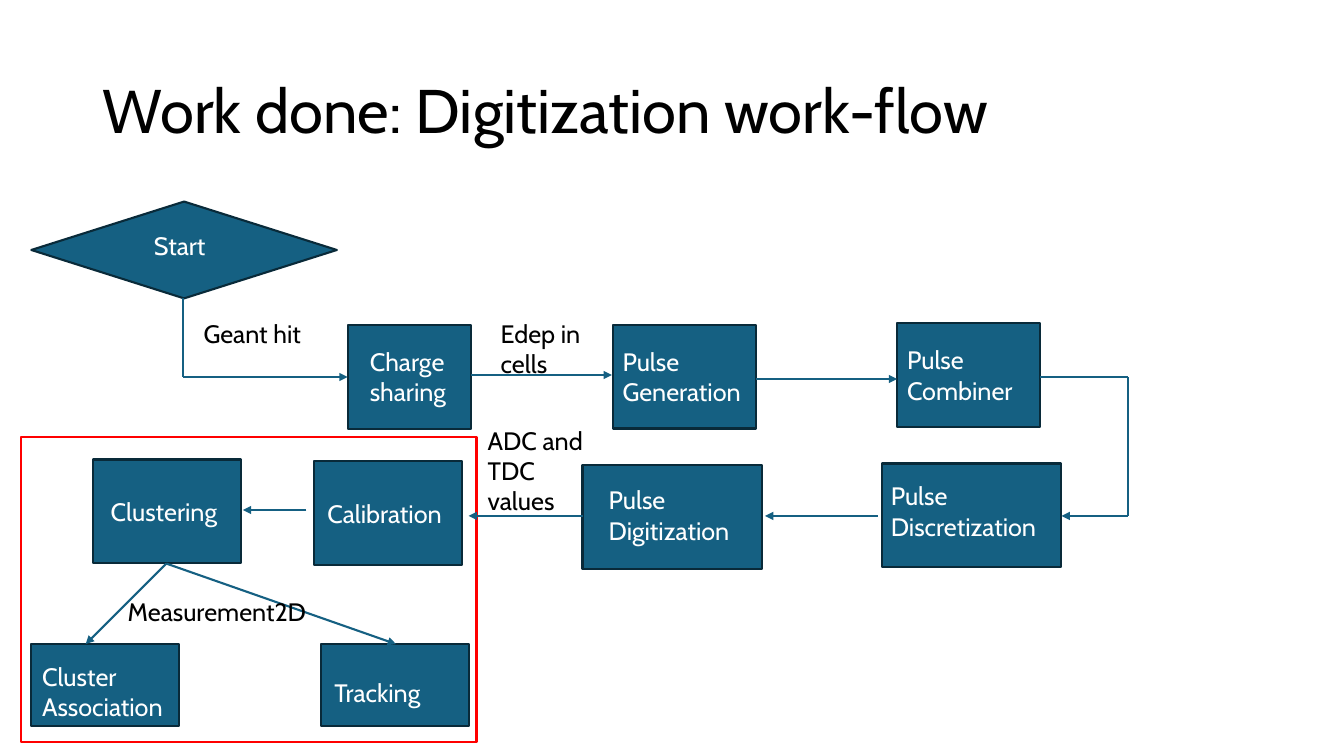
"""Builds the slide that shows the digitization work-flow as a flow chart."""
from itertools import pairwise

from lxml import etree
from pptx import Presentation
from pptx.dml.color import RGBColor
from pptx.enum.shapes import MSO_CONNECTOR, MSO_SHAPE
from pptx.enum.text import MSO_ANCHOR
from pptx.oxml.ns import qn
from pptx.util import Cm, Pt

DIAMOND = MSO_SHAPE.DIAMOND
RECTANGLE = MSO_SHAPE.RECTANGLE
STRAIGHT = MSO_CONNECTOR.STRAIGHT
MIDDLE = MSO_ANCHOR.MIDDLE

FONT = "Cabin"
COLOURS = {
    "text": "000000",
    "step": "156082",
    "outline": "092A39",
    "step text": "FFFFFF",
    "frame": "FF0000",
}
LINE_WIDTH = Pt(1.5)
ROW_HEIGHT = 2.62
LAST_ROW_HEIGHT = 2.06
STEP_TEXT_WIDTH = 4.32
TEXT_LINE = 0.76
TEXT_MARGINS = 0.26

# text, left, top, width, height, text left, text top, text lines
STEPS = [
    ("Charge sharing", 8.76, 8.2, 3.12, ROW_HEIGHT, 9.07, 8.59, 2),
    ("Pulse Generation", 15.44, 8.18, 3.61, ROW_HEIGHT, 15.44, 8.59, 2),
    ("Pulse Combiner", 22.61, 8.15, 3.61, ROW_HEIGHT, 22.61, 8.56, 2),
    ("Pulse Discretization", 22.23, 11.68, 4.52, ROW_HEIGHT, 22.2, 11.99, 2),
    ("Pulse Digitization", 14.68, 11.71, 4.52, ROW_HEIGHT, 15.09, 12.09, 2),
    ("Calibration", 7.92, 11.61, 3.73, ROW_HEIGHT, 8.0, 12.42, 1),
    ("Clustering", 2.34, 11.58, 3.73, ROW_HEIGHT, 2.54, 12.37, 1),
    ("Cluster\nAssociation", 0.79, 16.23, 3.73, LAST_ROW_HEIGHT, 0.81, 16.54, 2),
    ("Tracking", 8.1, 16.23, 3.73, LAST_ROW_HEIGHT, 8.18, 16.94, 1),
]
ROUTES = [
    [(4.62, 7.52), (4.62, 9.5), (8.76, 9.5)],
    [(11.86, 9.45), (15.42, 9.45)],
    [(19.05, 9.55), (22.61, 9.55)],
    [(26.21, 9.5), (28.42, 9.5), (28.42, 13), (26.75, 13)],
    [(22.12, 13), (19.28, 13)],
    [(14.68, 13), (11.81, 13)],
    [(7.72, 12.85), (6.12, 12.85)],
    [(4.19, 14.2), (2.16, 16.23)],
    [(4.19, 14.2), (9.98, 16.23)],
]
# text, left, top, width, text lines
LABELS = [
    ("Geant hit", 4.88, 7.9, 5.49, 1),
    ("Edep in cells", 12.37, 7.9, 3.12, 2),
    ("ADC and TDC values", 12.04, 10.59, 3.12, 3),
    ("Measurement2D", 2.97, 14.91, 6.07, 1),
]


def colour(name):
    """Return the named colour."""
    return RGBColor.from_string(COLOURS[name])


def add_text(page, text, left, top, width, height, size=18, ink="text"):
    """Add a wrapping text box and return it."""
    box = page.shapes.add_textbox(Cm(left), Cm(top), Cm(width), Cm(height))
    box.text_frame.word_wrap = True
    box.text_frame.text = text
    for paragraph in box.text_frame.paragraphs:
        for span in paragraph.runs:
            span.font.name = FONT
            span.font.size = Pt(size)
            span.font.color.rgb = colour(ink)
    return box


def add_title(page, text):
    """Add the slide title."""
    box = add_text(page, text, 2.34, 1.02, 29.21, 3.68, size=44)
    box.text_frame.vertical_anchor = MIDDLE
    box.text_frame.paragraphs[0].line_spacing = 0.9


def add_outline(page, kind, left, top, width, height, line):
    """Add an unfilled preset shape and return it."""
    shape = page.shapes.add_shape(kind, Cm(left), Cm(top), Cm(width), Cm(height))
    shape.shadow.inherit = False
    shape.fill.background()
    shape.line.color.rgb = colour(line)
    shape.line.width = LINE_WIDTH
    return shape


def add_step(page, text, left, top, width, height,
             text_left, text_top, lines, kind=RECTANGLE):
    """Add a filled step of the flow with its text."""
    shape = add_outline(page, kind, left, top, width, height, "outline")
    shape.fill.solid()
    shape.fill.fore_color.rgb = colour("step")
    add_text(page, text, text_left, text_top, STEP_TEXT_WIDTH,
             text_height(lines), ink="step text")


def text_height(lines):
    """Return the height of a text box with this many lines."""
    return lines * TEXT_LINE + TEXT_MARGINS


def add_route(page, points):
    """Join the points with lines and end the last one in an arrowhead."""
    for (start_x, start_y), (end_x, end_y) in pairwise(points):
        connector = page.shapes.add_connector(
            STRAIGHT, Cm(start_x), Cm(start_y), Cm(end_x), Cm(end_y))
        connector.line.color.rgb = colour("step")
        connector.line.width = LINE_WIDTH
        etree.SubElement(connector._element.spPr, qn("a:effectLst"))
    outline = connector.line._get_or_add_ln()
    etree.SubElement(outline, qn("a:tailEnd"), type="triangle")


def main():
    """Build and save the deck."""
    deck = Presentation()
    deck.slide_width, deck.slide_height = Cm(33.87), Cm(19.05)
    page = deck.slides.add_slide(deck.slide_layouts[6])
    add_title(page, "Work done: Digitization work-flow")
    add_step(page, "Start", 0.79, 5.08, 7.7, 2.44, 3.63, 5.69, 1, kind=DIAMOND)
    for step in STEPS:
        add_step(page, *step)
    add_outline(page, RECTANGLE, 0.53, 11.02, 11.48, 7.67, "frame")
    for points in ROUTES:
        add_route(page, points)
    for text, left, top, width, lines in LABELS:
        add_text(page, text, left, top, width, text_height(lines))
    deck.save("out.pptx")


if __name__ == "__main__":
    main()
